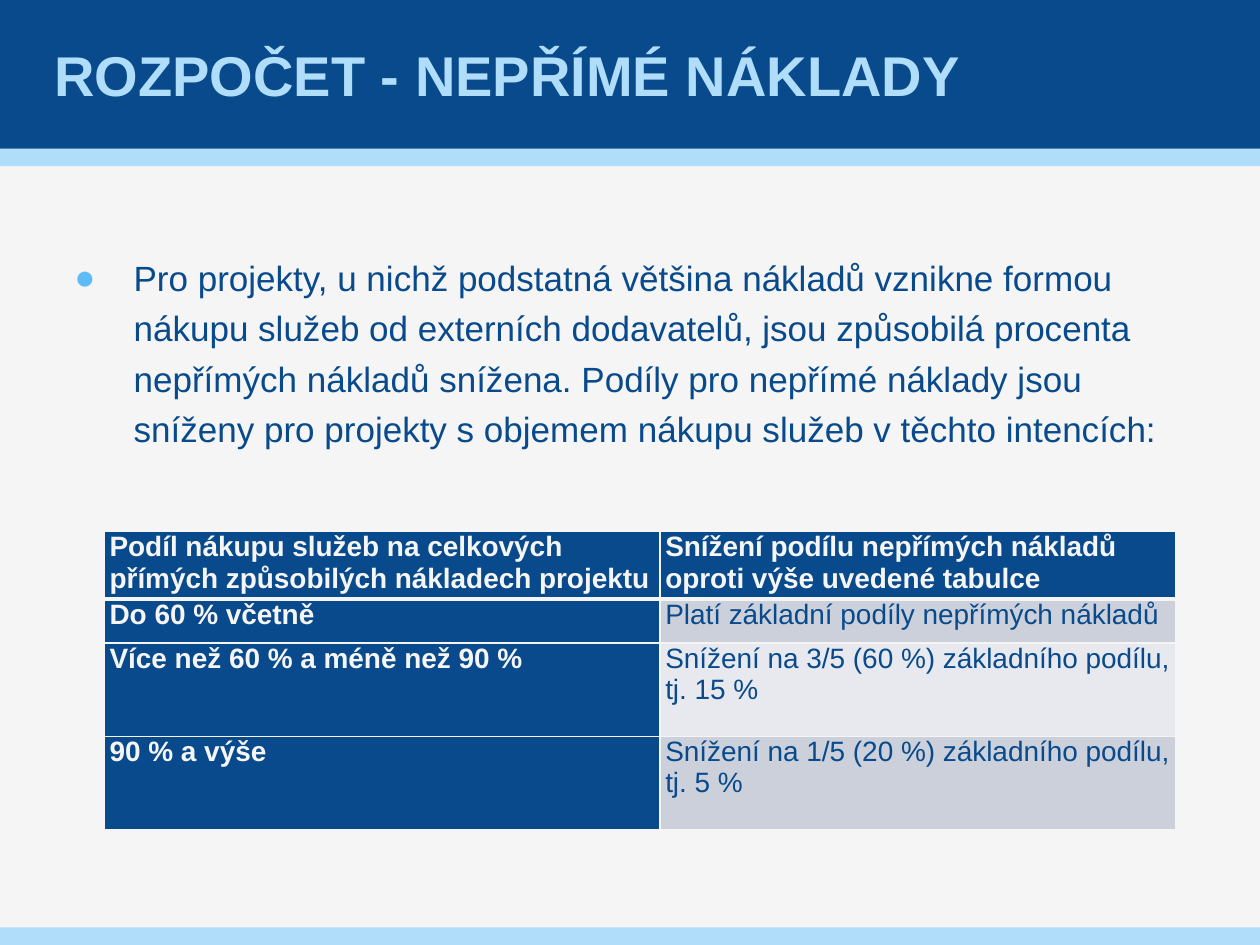
from lxml import etree
from pptx import Presentation
from pptx.dml.color import RGBColor
from pptx.enum.shapes import MSO_SHAPE
from pptx.enum.text import MSO_ANCHOR
from pptx.oxml import parse_xml
from pptx.oxml.ns import nsdecls, qn
from pptx.util import Inches, Pt

NAVY = RGBColor(0x08, 0x4A, 0x8B)
SKY = RGBColor(0xAF, 0xDD, 0xFA)
PAPER = RGBColor(0xF5, 0xF5, 0xF5)
BULLET = RGBColor(0x5F, 0xBB, 0xF5)
BAND_DARK = RGBColor(0xCC, 0xD0, 0xDA)
BAND_LIGHT = RGBColor(0xE7, 0xE9, 0xEE)


def write(frame, text, size, color, bold=False, **spacing):
    """Fill the frame's first paragraph and return that paragraph."""
    frame.word_wrap = True
    para = frame.paragraphs[0]
    for name, value in spacing.items():
        setattr(para, name, value)
    span = para.add_run()
    span.text = text
    for name, value in {"name": "Arial", "size": Pt(size), "bold": bold}.items():
        setattr(span.font, name, value)
    span.font.color.rgb = color
    return para


def add_text_box(left, top, width, height, side_margin=0):
    box = page.shapes.add_textbox(Inches(left), Inches(top), Inches(width), Inches(height))
    frame = box.text_frame
    frame.margin_left = frame.margin_right = Inches(side_margin)
    frame.margin_top = frame.margin_bottom = 0
    return frame


deck = Presentation()
deck.slide_width, deck.slide_height = Inches(10), Inches(7.5)
page = deck.slides.add_slide(deck.slide_layouts[6])
page.background.fill.solid()
page.background.fill.fore_color.rgb = PAPER

# Header and footer bands
for top, height, color in [(1.18, 0.14, SKY), (0, 1.18, NAVY), (7.36, 0.14, SKY)]:
    band = page.shapes.add_shape(
        MSO_SHAPE.RECTANGLE, 0, Inches(top), deck.slide_width, Inches(height))
    band.shadow.inherit = False
    band.fill.solid()
    band.fill.fore_color.rgb = color
    band.line.fill.background()

# Title
title = add_text_box(0.39, 0, 9.21, 1.18, side_margin=0.04)
title.vertical_anchor = MSO_ANCHOR.MIDDLE
write(title, "ROZPOČET - NEPŘÍMÉ NÁKLADY", 32, SKY, bold=True)

# Bulleted introduction
intro = write(
    add_text_box(0.59, 1.97, 8.82, 2),
    "Pro projekty, u nichž podstatná většina nákladů vznikne formou nákupu služeb "
    "od externích dodavatelů, jsou způsobilá procenta nepřímých nákladů snížena. "
    "Podíly pro nepřímé náklady jsou sníženy pro projekty s objemem nákupu služeb "
    "v těchto intencích:",
    20, NAVY, line_spacing=Pt(28.8), space_before=Pt(6), space_after=Pt(6))
intro_format = intro._p.get_or_add_pPr()
intro_format.set("marL", str(Inches(0.47)))
intro_format.set("indent", str(-Inches(0.47)))
bullet_color = etree.SubElement(intro_format, qn("a:buClr"))
etree.SubElement(bullet_color, qn("a:srgbClr"), val=str(BULLET))
etree.SubElement(intro_format, qn("a:buFont"), typeface="Arial")
etree.SubElement(intro_format, qn("a:buChar"), char="●")

# Table of reductions
ROWS = [
    ("Podíl nákupu služeb na celkových přímých způsobilých nákladech projektu",
     "Snížení podílu nepřímých nákladů oproti výše uvedené tabulce"),
    ("Do 60 % včetně", "Platí základní podíly nepřímých nákladů"),
    ("Více než 60 % a méně než 90 %", "Snížení na 3/5 (60 %) základního podílu, tj. 15 %"),
    ("90 % a výše", "Snížení na 1/5 (20 %) základního podílu, tj. 5 %"),
]
table = page.shapes.add_table(
    len(ROWS), 2, Inches(0.83), Inches(4.22), Inches(8.5), Inches(2.33)).table
for column, width in zip(table.columns, [4.41, 4.09]):
    column.width = Inches(width)
for row, height in zip(table.rows, [0.5, 0.35, 0.74, 0.74]):
    row.height = Inches(height)

for row_index, texts in enumerate(ROWS):
    for column_index, text in enumerate(texts):
        cell = table.cell(row_index, column_index)
        cell.margin_left = cell.margin_right = cell.margin_top = cell.margin_bottom = 0
        is_heading = row_index == 0 or column_index == 0
        para = write(cell.text_frame, text, 16, PAPER if is_heading else NAVY,
                     bold=is_heading, space_before=Pt(3), space_after=Pt(3))
        para._p.get_or_add_pPr().set("marL", str(Inches(0.04)))
        para._p.get_or_add_pPr().set("indent", "0")
        cell.fill.solid()
        band_color = BAND_DARK if row_index % 2 else BAND_LIGHT
        cell.fill.fore_color.rgb = NAVY if is_heading else band_color
        widths = {"lnL": 1, "lnR": 1,
                  "lnT": 3 if row_index == 1 else 1,
                  "lnB": 3 if row_index == 0 else 1}
        for position, (side, width) in enumerate(widths.items()):
            border = parse_xml(
                f'<a:{side} {nsdecls("a")} w="{Pt(width)}"><a:solidFill>'
                f'<a:srgbClr val="{PAPER}"/></a:solidFill></a:{side}>')
            cell._tc.get_or_add_tcPr().insert(position, border)

deck.save("out.pptx")
